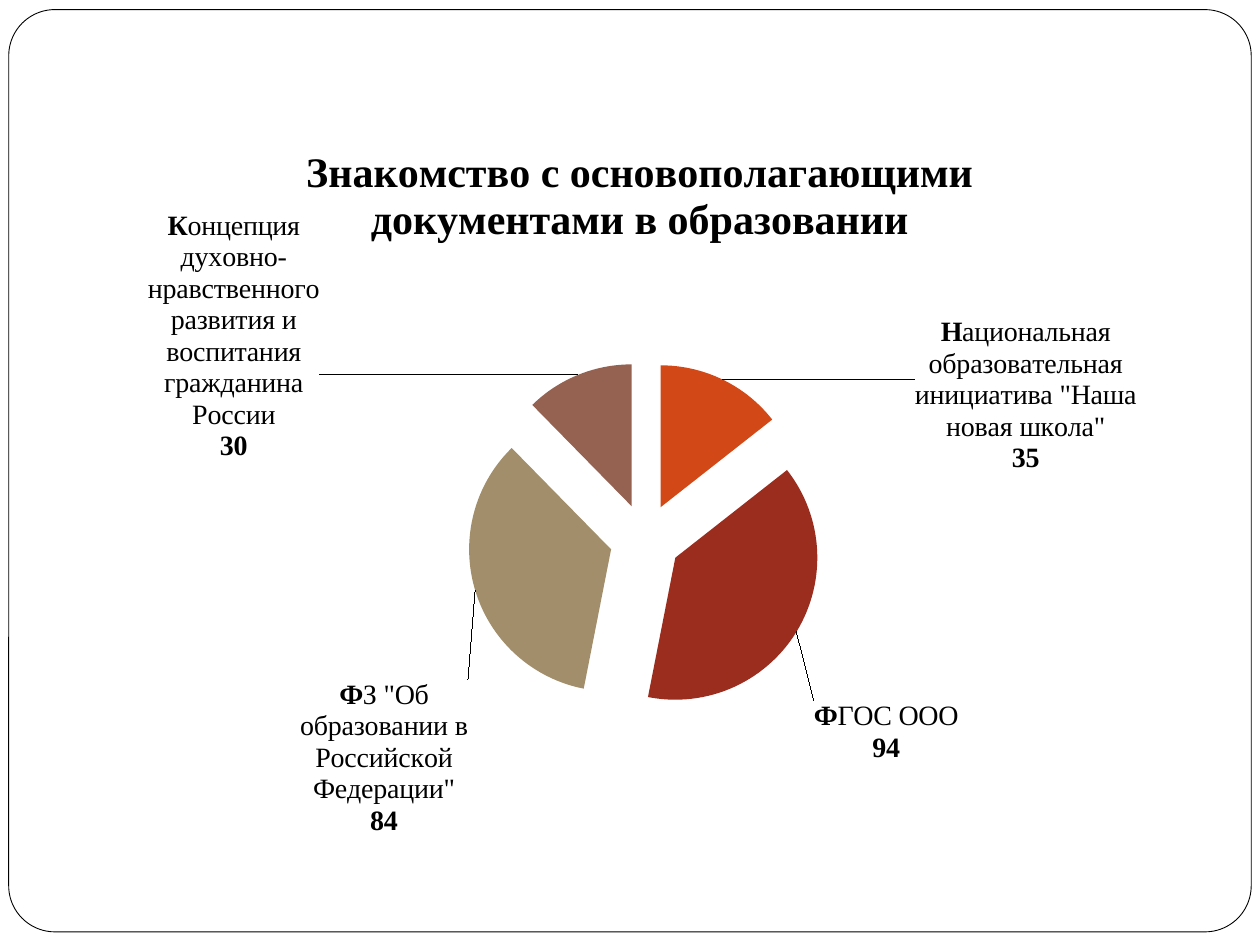
from lxml.etree import SubElement
from pptx import Presentation
from pptx.chart.data import CategoryChartData
from pptx.dml.color import RGBColor
from pptx.enum.chart import XL_CHART_TYPE, XL_LABEL_POSITION
from pptx.enum.shapes import MSO_SHAPE
from pptx.oxml import parse_xml
from pptx.oxml.ns import nsdecls, qn
from pptx.util import Pt

BLACK = RGBColor(0x00, 0x00, 0x00)
WHITE = RGBColor(0xFF, 0xFF, 0xFF)
FONT = "Times New Roman"
TITLE = "Знакомство с основополагающими документами в образовании"

# Label, value, colour, label shift (share of chart size)
SLICES = [
    ('Национальная образовательная инициатива "Наша новая школа"',
     35, RGBColor(0xD3, 0x48, 0x17), (0.17, 0.14)),
    ("ФГОС ООО", 94, RGBColor(0x9B, 0x2D, 0x1F), (0.01, 0.09)),
    ('ФЗ "Об образовании в Российской Федерации"',
     84, RGBColor(0xA2, 0x8E, 0x6A), (0, 0.12)),
    ("Концепция духовно-нравственного развития и воспитания "
     "гражданина России",
     30, RGBColor(0x95, 0x62, 0x51), (-0.23, 0.13)),
]
PLOT = {"layoutTarget": "inner", "xMode": "edge", "yMode": "edge",
        "x": 0.19, "y": 0.34, "w": 0.63, "h": 0.49}


def layout(props):
    node = parse_xml(f"<c:layout {nsdecls('c')}/>")
    manual = SubElement(node, qn("c:manualLayout"))
    for name, val in props.items():
        SubElement(manual, qn("c:" + name)).set("val", str(val))
    return node


def style(font, size, bold):
    font.name, font.size, font.bold = FONT, Pt(size), bold
    font.color.rgb = BLACK


deck = Presentation()
deck.slide_width, deck.slide_height = Pt(720), Pt(540)
slide = deck.slides.add_slide(deck.slide_layouts[6])

# Rounded frame
frame = slide.shapes.add_shape(
    MSO_SHAPE.ROUNDED_RECTANGLE, Pt(5), Pt(5.5), Pt(710), Pt(527))
frame.adjustments[0] = 0.05
frame.shadow.inherit = False
frame.fill.solid()
frame.fill.fore_color.rgb = WHITE
frame.line.color.rgb = BLACK
frame.line.width = Pt(0.5)

# Pie chart
data = CategoryChartData()
data.categories = [row[0] for row in SLICES]
data.add_series("Series 1", [row[1] for row in SLICES])
chart = slide.shapes.add_chart(
    XL_CHART_TYPE.PIE, Pt(48), Pt(66), Pt(635), Pt(414), data).chart
style(chart.font, 10, False)
chart.has_legend = False
chart.has_title = True
head = chart.chart_title.text_frame
head.text = TITLE
style(head.paragraphs[0].runs[0].font, 24, True)

area = chart._chartSpace.chart.plotArea
for old in area.findall(qn("c:layout")):
    area.remove(old)
area.insert(0, layout(PLOT))

plot = chart.plots[0]
plot.vary_by_categories = True
pie = plot.series[0]

# Labels shared by all slices
tags = pie.data_labels
tags.show_value = tags.show_category_name = True
tags.position = XL_LABEL_POSITION.OUTSIDE_END
style(tags.font, 16, True)
lead = tags._element.find(qn("c:showLeaderLines"))
if lead is None:
    lead = SubElement(tags._element, qn("c:showLeaderLines"))
lead.set("val", "1")

# Slice colours and label texts
for i, (text, count, color, (dx, dy)) in enumerate(SLICES):
    point = pie.points[i]
    point.format.fill.solid()
    point.format.fill.fore_color.rgb = color
    label = point.data_label
    box = label.text_frame
    box.word_wrap = True
    first, last = box.paragraphs[0], box.add_paragraph()
    for para, part, bold in ((first, text[0], True), (first, text[1:], False),
                             (last, str(count), True)):
        run = para.add_run()
        run.text = part
        style(run.font, 16, bold)
    label.position = XL_LABEL_POSITION.OUTSIDE_END
    node = tags._element.xpath(f"c:dLbl[c:idx/@val='{i}']")[0]
    node.find(qn("c:showCatName")).set("val", "1")
    node.find(qn("c:idx")).addnext(layout({"x": dx, "y": dy}))

# Pull the slices apart
burst = parse_xml(f'<c:explosion {nsdecls("c")} val="25"/>')
pie._element.find(qn("c:dPt")).addprevious(burst)

deck.save("out.pptx")
